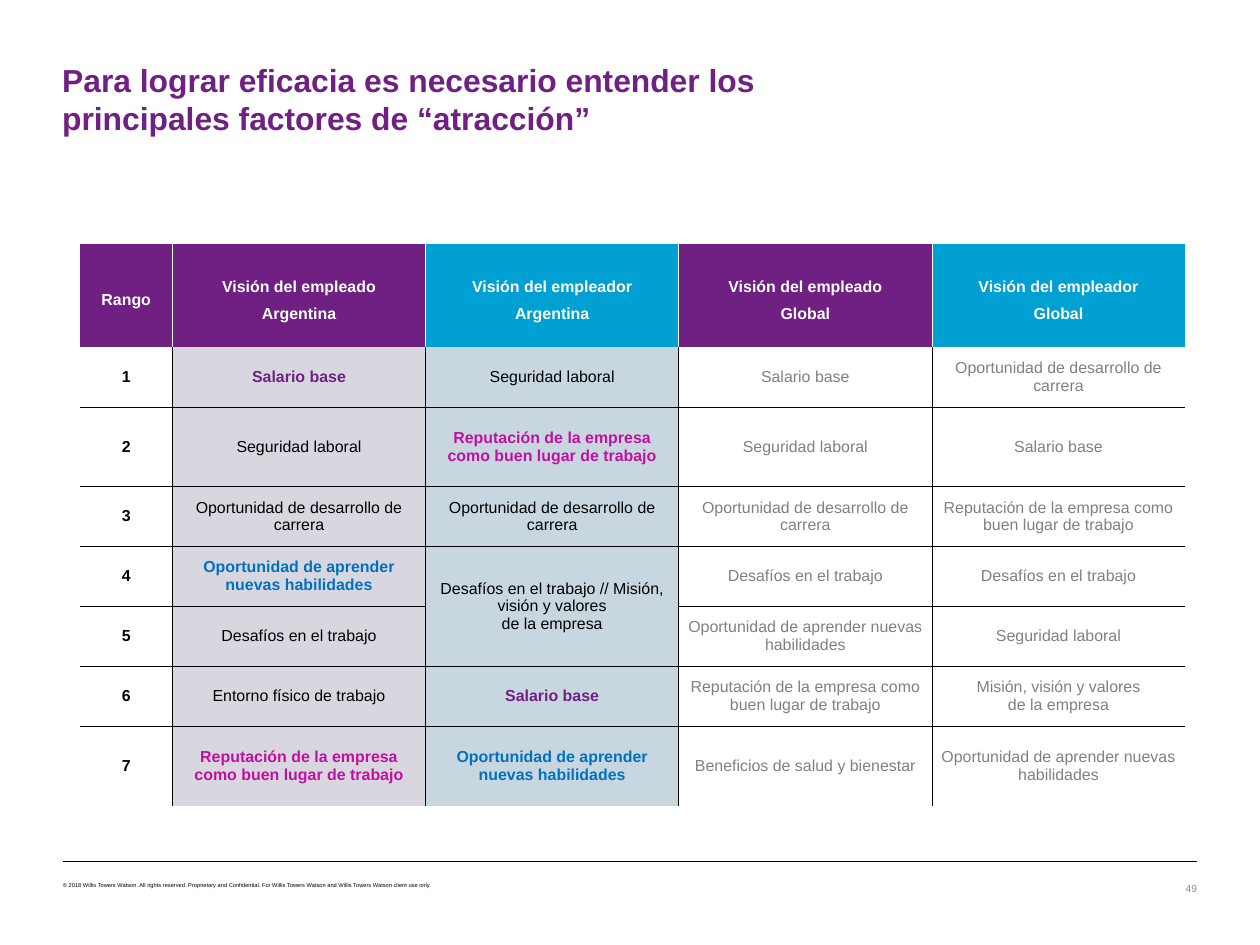
from dataclasses import dataclass
from typing import Optional

from lxml.etree import SubElement
from pptx import Presentation
from pptx.dml.color import RGBColor
from pptx.enum.shapes import MSO_CONNECTOR as Link
from pptx.enum.text import MSO_ANCHOR as Anchor, MSO_AUTO_SIZE as Fit, PP_ALIGN as Align
from pptx.oxml.ns import qn
from pptx.slide import Slide
from pptx.table import Table, _Cell as Cell
from pptx.text.text import TextFrame
from pptx.util import Pt


@dataclass(frozen=True)
class Theme:
    font: str = "Arial"
    purple: str = "702082"
    cyan: str = "00A0D2"
    pink: str = "C110A0"
    blue: str = "0070C0"
    lilac: str = "D8D7DF"
    mist: str = "C8D7DF"
    black: str = "000000"
    white: str = "FFFFFF"
    gray: str = "808080"
    pale: str = "8C8C8C"
    title: float = 28
    body: float = 14
    page: float = 9
    legal: float = 5
    rule: float = 0.75


@dataclass(frozen=True)
class Column:
    head: str
    top: str
    items: list[str]
    fill: Optional[str] = None
    ink: str = "808080"
    bold: bool = False
    marked: bool = False
    width: float = 222.8
    inset: float = 0.72


THEME = Theme()
BASE = "Salario base"
SAFE = "Seguridad laboral"
GROW = "Oportunidad de desarrollo de carrera"
LEARN = "Oportunidad de aprender nuevas habilidades"
FAME = "Reputación de la empresa como buen lugar de trabajo"
DARE = "Desafíos en el trabajo"
GOAL = "Misión, visión y valores\nde la empresa"
MARKS = {BASE: THEME.purple, FAME: THEME.pink, LEARN: THEME.blue}

COLUMNS = [
    Column("Rango", THEME.purple, [str(rank) for rank in range(1, 8)],
           ink=THEME.black, bold=True, width=81.4, inset=7.2),
    Column("Visión del empleado\nArgentina", THEME.purple,
           [BASE, SAFE, GROW, LEARN, DARE, "Entorno físico de trabajo", FAME],
           fill=THEME.lilac, ink=THEME.black, marked=True),
    Column("Visión del empleador\nArgentina", THEME.cyan,
           [SAFE, FAME, GROW, f"{DARE} // {GOAL}", "", BASE, LEARN],
           fill=THEME.mist, ink=THEME.black, marked=True),
    Column("Visión del empleado\nGlobal", THEME.purple,
           [BASE, SAFE, GROW, DARE, LEARN, FAME, "Beneficios de salud y bienestar"]),
    Column("Visión del empleador\nGlobal", THEME.cyan,
           [GROW, BASE, FAME, DARE, SAFE, GOAL, LEARN]),
]
HEIGHTS = [90.7, 52.8, 69.8, 52.8, 52.8, 52.8, 52.8, 69.8]


def write(frame: TextFrame, text: str, *, size: float, color: str, bold: bool = False,
          align: Align = Align.LEFT, spacing: float = 1.0) -> None:
    frame.word_wrap = True
    for num, line in enumerate(text.split("\n")):
        par = frame.add_paragraph() if num else frame.paragraphs[0]
        par.alignment = align
        par.line_spacing = spacing
        run = par.add_run()
        run.text = line
        run.font.name = THEME.font
        run.font.size = Pt(size)
        run.font.bold = bold
        run.font.color.rgb = RGBColor.from_string(color)


def edge(cell: Cell, side: str, color: Optional[str]) -> None:
    """Set one cell border; no color means no border."""
    props = cell._tc.get_or_add_tcPr()
    line = SubElement(props, qn(f"a:ln{side}"), w=str(Pt(THEME.rule)))
    if color is None:
        SubElement(line, qn("a:noFill"))
    else:
        SubElement(SubElement(line, qn("a:solidFill")), qn("a:srgbClr"), val=color)


def frame_cell(cell: Cell, row: int, col: int) -> None:
    """Rule the inside of the grid only, with white between the heads."""
    tall = THEME.black if row else THEME.white
    last = len(HEIGHTS) - 1
    edge(cell, "L", tall if col else None)
    edge(cell, "R", tall if col < len(COLUMNS) - 1 else None)
    edge(cell, "T", THEME.black if row > 1 else None)
    edge(cell, "B", THEME.black if 0 < row < last else None)


def paint(cell: Cell, fill: Optional[str]) -> None:
    if fill is None:
        cell.fill.background()
    else:
        cell.fill.solid()
        cell.fill.fore_color.rgb = RGBColor.from_string(fill)


def fill_column(table: Table, col: int, data: Column) -> None:
    table.columns[col].width = Pt(data.width)
    for row, text in enumerate([data.head, *data.items]):
        cell = table.cell(row, col)
        head = row == 0
        frame_cell(cell, row, col)
        paint(cell, data.top if head else data.fill)
        cell.vertical_anchor = Anchor.MIDDLE
        cell.margin_left = cell.margin_right = Pt(data.inset if head else 7.2)
        cell.margin_top = cell.margin_bottom = Pt(5.76 if head else 3.6)
        if not text:
            continue
        mark = MARKS.get(text) if data.marked else None
        write(cell.text_frame, text, size=THEME.body,
              color=THEME.white if head else mark or data.ink,
              bold=head or data.bold or mark is not None,
              align=Align.CENTER, spacing=1.5 if head else 1.0)


def add_ranking(slide: Slide) -> None:
    wide = sum(data.width for data in COLUMNS)
    table = slide.shapes.add_table(len(HEIGHTS), len(COLUMNS), Pt(70.4), Pt(214.8),
                                   Pt(wide), Pt(sum(HEIGHTS))).table
    table.first_row = table.horz_banding = False
    for row, height in zip(table.rows, HEIGHTS):
        row.height = Pt(height)
    for col, data in enumerate(COLUMNS):
        fill_column(table, col, data)
    table.cell(4, 2).merge(table.cell(5, 2))


def add_title(slide: Slide, text: str) -> None:
    title = slide.shapes.title
    title.left, title.top, title.width, title.height = Pt(47.5), Pt(52.6), Pt(758.2), Pt(68.4)
    title.fill.solid()
    title.fill.fore_color.rgb = RGBColor.from_string(THEME.white)
    title.text_frame.auto_size = Fit.NONE
    title.text_frame.vertical_anchor = Anchor.MIDDLE
    write(title.text_frame, text, size=THEME.title, color=THEME.purple, bold=True)


def add_note(slide: Slide, text: str, left: float, width: float, height: float, *,
             size: float, color: str, align: Align = Align.LEFT) -> None:
    box = slide.shapes.add_textbox(Pt(left), Pt(776.2), Pt(width), Pt(height))
    frame = box.text_frame
    frame.margin_left = frame.margin_right = frame.margin_top = frame.margin_bottom = 0
    write(frame, text, size=size, color=color, align=align)


def add_rule(slide: Slide) -> None:
    rule = slide.shapes.add_connector(Link.STRAIGHT, Pt(55.4), Pt(757.8), Pt(1053.4), Pt(757.8))
    rule.line.width = Pt(0.25)
    rule.line.color.rgb = RGBColor.from_string(THEME.black)
    SubElement(rule._element.spPr, qn("a:effectLst"))


def main() -> None:
    deck = Presentation()
    deck.slide_width, deck.slide_height = Pt(1108.8), Pt(831.6)
    slide = deck.slides.add_slide(deck.slide_layouts[5])
    add_rule(slide)
    add_title(slide, "Para lograr eficacia es necesario entender los "
                     "principales factores de “atracción”")
    add_note(slide, "49", 1007.3, 46.1, 10.8, size=THEME.page, color=THEME.pale,
             align=Align.RIGHT)
    add_note(slide, "© 2018 Willis Towers Watson. All rights reserved. Proprietary and "
                    "Confidential. For Willis Towers Watson and Willis Towers Watson "
                    "client use only.", 55.4, 640, 5.8, size=THEME.legal, color=THEME.black)
    add_ranking(slide)
    deck.save("out.pptx")


if __name__ == "__main__":
    main()
